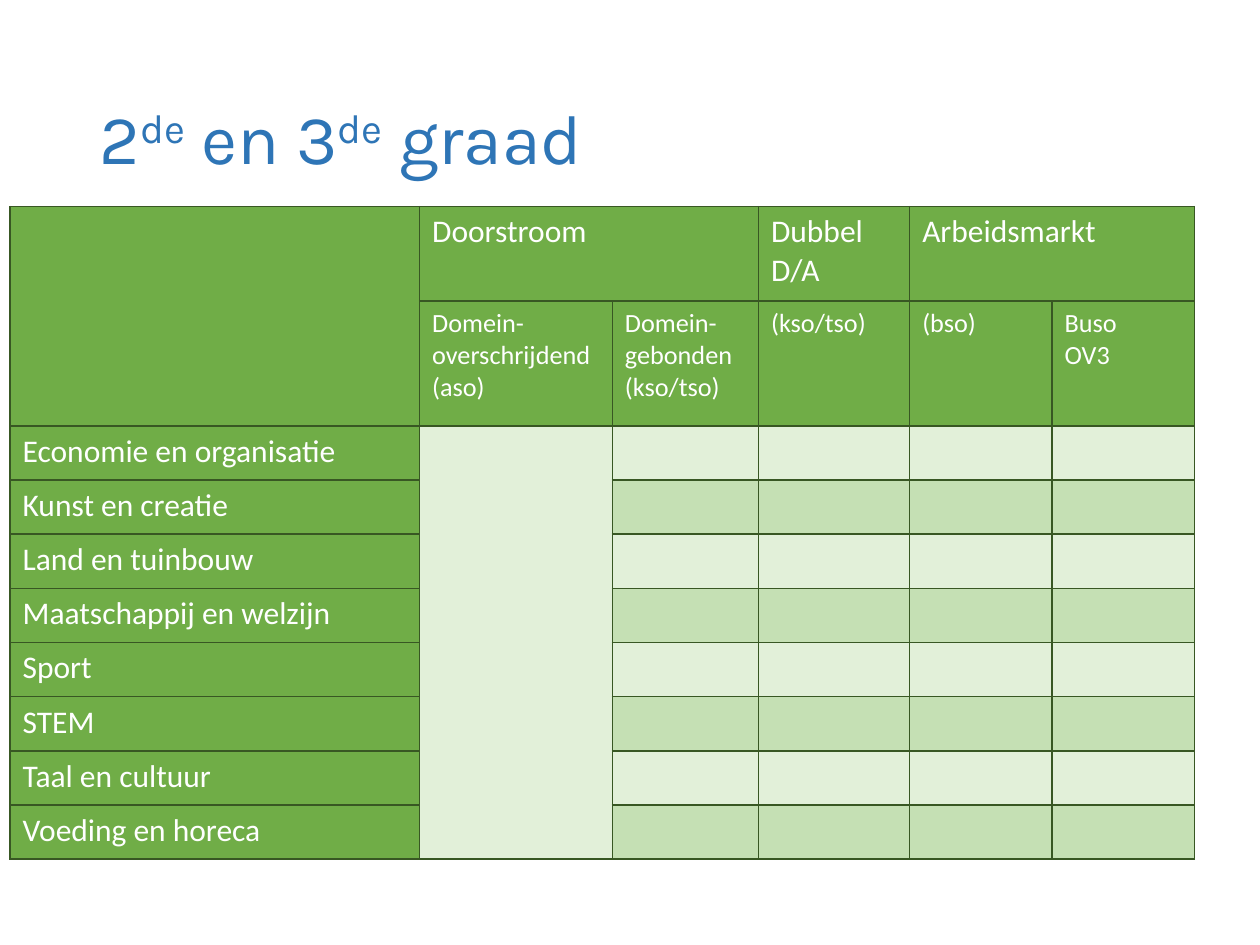
from lxml.etree import fromstring
from pptx import Presentation
from pptx.dml.color import RGBColor as RGB
from pptx.enum.text import MSO_ANCHOR as ANCHOR, PP_ALIGN as ALIGN
from pptx.util import Inches, Pt

THEME = dict(title="2E75B6", head="70AD47", text="FFFFFF", line="385723",
             bands=("E2F0D9", "C5E0B4"), title_font="Karla", font="Calibri",
             title_size=40, label_size=18, sub_size=15)
NS = "http://schemas.openxmlformats.org/drawingml/2006/main"

# Content: title as (text, superscript) pairs, then header rows and domains
TITLE = [("2", False), ("de", True), (" en 3", False), ("de", True), (" graad", False)]
FINALITIES = ["", "Doorstroom", "", "Dubbel\vD/A", "Arbeidsmarkt", ""]
TYPES = ["", "Domein-overschrijdend\v(aso)", "Domein-gebonden\v(kso/tso)",
         "(kso/tso)", "(bso)", "Buso\vOV3"]
DOMAINS = ["Economie en organisatie", "Kunst en creatie", "Land en tuinbouw",
           "Maatschappij en welzijn", "Sport", "STEM", "Taal en cultuur",
           "Voeding en horeca"]
COL_WIDTHS = [3.25, 1.53, 1.16, 1.2, 1.13, 1.13]
ROW_HEIGHTS = [0.75, 0.99] + [0.43] * len(DOMAINS)
MERGES = [((0, 0), (1, 0)), ((0, 1), (0, 2)), ((0, 4), (0, 5)),
          ((2, 1), (len(DOMAINS) + 1, 1))]


def style_font(font, name, size, color):
    font.name, font.size = name, Pt(size)
    font.color.rgb = RGB.from_string(color)


def add_borders(cell):
    tcPr = cell._tc.get_or_add_tcPr()
    for i, side in enumerate("LRTB"):
        tcPr.insert(i, fromstring(
            f'<a:ln{side} xmlns:a="{NS}" w="{Pt(1)}"><a:solidFill>'
            f'<a:srgbClr val="{THEME["line"]}"/></a:solidFill></a:ln{side}>'))


def fill_cell(cell, text, fill, size):
    cell.text_frame.text = text
    for r in cell.text_frame.paragraphs[0].runs:
        style_font(r.font, THEME["font"], size, THEME["text"])
    cell.fill.solid()
    cell.fill.fore_color.rgb = RGB.from_string(fill)
    add_borders(cell)


prs = Presentation()
prs.slide_width, prs.slide_height = Inches(10), Inches(7.5)
slide = prs.slides.add_slide(prs.slide_layouts[5])

# Title
title = slide.shapes.title
title.left, title.top = Inches(0.69), Inches(0.4)
title.width, title.height = Inches(8.62), Inches(1.45)
title.text_frame.vertical_anchor = ANCHOR.MIDDLE
p = title.text_frame.paragraphs[0]
p.alignment, p.line_spacing = ALIGN.LEFT, 0.9
for text, raised in TITLE:
    r = p.add_run()
    r.text = text
    style_font(r.font, THEME["title_font"], THEME["title_size"], THEME["title"])
    if raised:
        r._r.get_or_add_rPr().set("baseline", "30000")

# Table grid
table = slide.shapes.add_table(
    len(ROW_HEIGHTS), len(COL_WIDTHS), Inches(0.08), Inches(1.64),
    Inches(sum(COL_WIDTHS)), Inches(sum(ROW_HEIGHTS))).table
table.first_row = table.horz_banding = False
for col, width in zip(table.columns, COL_WIDTHS):
    col.width = Inches(width)
for row, height in zip(table.rows, ROW_HEIGHTS):
    row.height = Inches(height)

# Cells: green header rows and first column, alternating bands elsewhere
rows = [FINALITIES, TYPES] + [[d] + [""] * (len(COL_WIDTHS) - 1) for d in DOMAINS]
for i, texts in enumerate(rows):
    size = THEME["sub_size" if i == 1 else "label_size"]
    for j, text in enumerate(texts):
        fill = THEME["head"] if i < 2 or j == 0 else THEME["bands"][i % 2]
        fill_cell(table.cell(i, j), text, fill, size)
for start, end in MERGES:
    table.cell(*start).merge(table.cell(*end))

prs.save("out.pptx")
